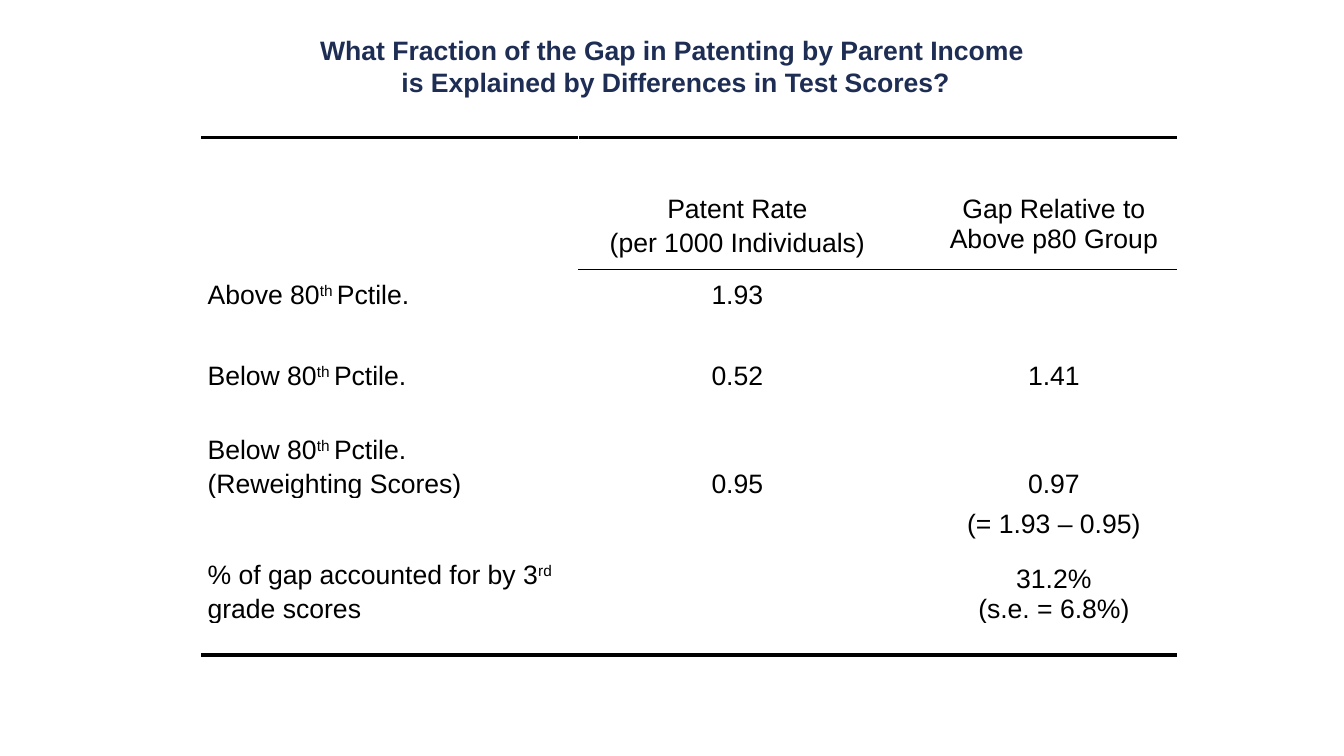
from lxml import etree
from pptx import Presentation
from pptx.dml.color import RGBColor
from pptx.enum.text import MSO_ANCHOR, PP_ALIGN
from pptx.oxml.ns import qn
from pptx.util import Pt

LEFT, CENTER = PP_ALIGN.LEFT, PP_ALIGN.CENTER
MIDDLE, BOTTOM = MSO_ANCHOR.MIDDLE, MSO_ANCHOR.BOTTOM
NAVY = RGBColor(0x1E, 0x2D, 0x53)
BLACK = RGBColor(0, 0, 0)
WHITE = RGBColor(0xFF, 0xFF, 0xFF)
FONT, SIZE = "Arial", 19

COLUMN_WIDTHS = [269.3, 38.9, 187.9, 25.2, 175]
ROW_HEIGHTS = [21.6, 28.8, 65.5, 28.8, 28.8, 28.8, 28.8, 48.2, 28.8, 60.5, 21, 34]
FULL_WIDTH_ROWS = (0, 10, 11)
LABEL, RATE, GAP = 0, 1, 4
HEADER_ROW = 2

# A label is a list of (text, is superscript); "\n" breaks the line
LABELS = {
    3: [("Above 80", False), ("th ", True), ("Pctile.", False)],
    5: [("Below 80", False), ("th ", True), ("Pctile.", False)],
    7: [("Below 80", False), ("th ", True), ("Pctile.\n(Reweighting Scores)", False)],
    9: [("% of gap accounted for by 3", False), ("rd", True), (" grade scores", False)],
}
RATES = {3: ["1.93"], 5: ["0.52"], 7: ["0.95"]}
GAPS = {5: ["1.41"], 7: ["0.97"], 8: ["(= 1.93 – 0.95)"], 9: ["31.2%", "(s.e. = 6.8%)"]}


def add_run(paragraph, text, color=BLACK, bold=False, superscript=False):
    for index, line in enumerate(text.split("\n")):
        if index:
            paragraph.add_line_break()
        run = paragraph.add_run()
        run.text = line
        run.font.name, run.font.size = FONT, Pt(SIZE)
        run.font.bold = bold
        run.font.color.rgb = color
        if superscript:
            run.font._element.set("baseline", "30000")


def write_cell(cell, paragraphs, align=CENTER, anchor=BOTTOM, spacing=None, side=0.72, top=0.72):
    cell.vertical_anchor = anchor
    cell.margin_left = cell.margin_right = Pt(side)
    cell.margin_top = Pt(top)
    frame = cell.text_frame
    for index, runs in enumerate(paragraphs):
        paragraph = frame.add_paragraph() if index else frame.paragraphs[0]
        paragraph.alignment = align
        if spacing:
            paragraph.line_spacing = spacing
        for text, superscript in runs:
            add_run(paragraph, text, superscript=superscript)


def plain(lines):
    return [[(line, False)] for line in lines]


def set_border(cell, edge, color, width):
    line = etree.SubElement(cell._tc.get_or_add_tcPr(), qn("a:ln" + edge), w=str(Pt(width)))
    fill = etree.SubElement(line, qn("a:solidFill"))
    etree.SubElement(fill, qn("a:srgbClr"), val=str(color))


def rule_below(row, column):
    """Colour and width of the line under a cell."""
    if row in (0, 10):
        return BLACK, 3
    if row == HEADER_ROW and column > LABEL:
        return BLACK, 1
    return WHITE, 1


def style_cell(cell, row, column):
    cell.margin_left = cell.margin_right = cell.margin_top = cell.margin_bottom = 0
    set_border(cell, "L", WHITE, 1)
    set_border(cell, "R", WHITE, 1)
    set_border(cell, "T", *rule_below(row - 1, column))
    set_border(cell, "B", *rule_below(row, column))
    cell.fill.solid()
    cell.fill.fore_color.rgb = WHITE


def add_title(slide):
    box = slide.shapes.add_textbox(Pt(120), Pt(24), Pt(720), Pt(46))
    frame = box.text_frame
    frame.word_wrap = True
    frame.margin_left = frame.margin_right = frame.margin_top = frame.margin_bottom = 0
    paragraph = frame.paragraphs[0]
    paragraph.alignment = CENTER
    add_run(paragraph, "What Fraction of the Gap in Patenting by Parent Income\n"
            " is Explained by Differences in Test Scores?", NAVY, bold=True)


def add_patent_table(slide):
    table = slide.shapes.add_table(
        len(ROW_HEIGHTS), len(COLUMN_WIDTHS), Pt(144), Pt(76.3),
        Pt(sum(COLUMN_WIDTHS)), Pt(sum(ROW_HEIGHTS))).table
    table.first_row = table.horz_banding = False
    for column, width in zip(table.columns, COLUMN_WIDTHS):
        column.width = Pt(width)

    # Grid: heights, borders and merges
    for row, height in enumerate(ROW_HEIGHTS):
        table.rows[row].height = Pt(height)
        for column in range(len(COLUMN_WIDTHS)):
            style_cell(table.cell(row, column), row, column)
        if row in FULL_WIDTH_ROWS:
            table.cell(row, LABEL).merge(table.cell(row, GAP))
        else:
            last_rate_column = GAP if row == 1 else RATE + 1
            table.cell(row, RATE).merge(table.cell(row, last_rate_column))

    # Column headings
    write_cell(table.cell(HEADER_ROW, RATE), plain(["Patent Rate", "(per 1000 Individuals)"]),
               anchor=MIDDLE, spacing=1.15)
    write_cell(table.cell(HEADER_ROW, GAP), plain(["Gap Relative to Above p80 Group"]), anchor=MIDDLE)

    # Row labels and values
    for row, runs in LABELS.items():
        write_cell(table.cell(row, LABEL), [runs], align=LEFT, spacing=1.15, side=4.32, top=0)
    for column, values in ((RATE, RATES), (GAP, GAPS)):
        for row, lines in values.items():
            write_cell(table.cell(row, column), plain(lines))


def main():
    presentation = Presentation()
    presentation.slide_width, presentation.slide_height = Pt(960), Pt(540)
    slide = presentation.slides.add_slide(presentation.slide_layouts[6])
    add_patent_table(slide)
    add_title(slide)
    presentation.save("out.pptx")


if __name__ == "__main__":
    main()
